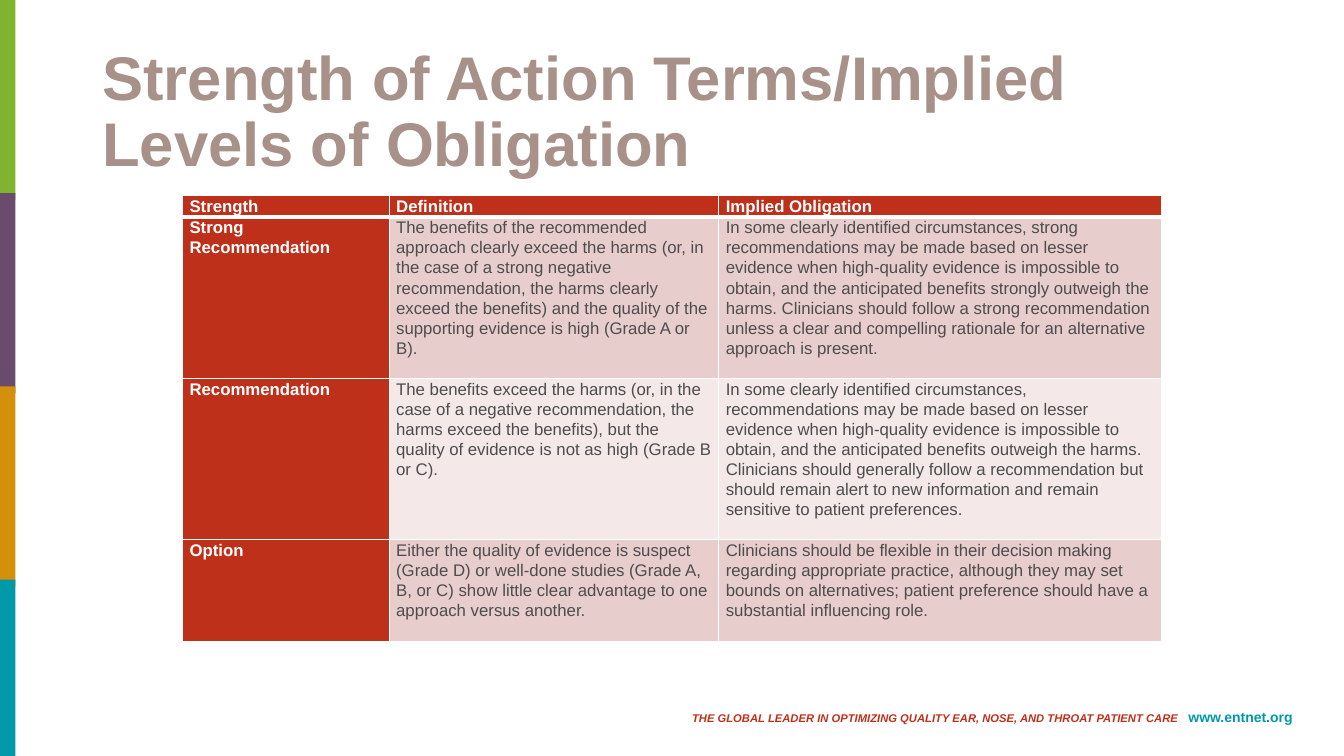
"""Build the slide on strength of action terms and implied obligation."""
from dataclasses import dataclass

import lxml.etree
import pptx
import pptx.dml.color
import pptx.enum.shapes
import pptx.enum.text
import pptx.oxml.ns
import pptx.util

Pt = pptx.util.Pt
RGBColor = pptx.dml.color.RGBColor
PP_ALIGN = pptx.enum.text.PP_ALIGN
MSO_ANCHOR = pptx.enum.text.MSO_ANCHOR


@dataclass(frozen=True)
class Theme:
    """Colours, font and type sizes of the slide."""
    font: str = "Arial"
    white: str = "FFFFFF"
    red: str = "BF301A"
    teal: str = "0099A8"
    title: str = "A89188"
    body: str = "4D4D4D"
    bands: tuple = ("E8CDCD", "F4E8E8")
    bars: tuple = ("80B330", "694C6B", "D3910B", "0099A8")
    title_size: float = 44
    table_size: float = 12
    tagline_size: float = 8
    address_size: float = 10


THEME = Theme()
SLIDE_WIDTH, SLIDE_HEIGHT = 960, 540
BAR_WIDTH, BAR_HEIGHT, BAR_PITCH = 11, 143, 138
COLUMN_WIDTHS = (147.6, 235.5, 316)
ROW_HEIGHTS = (15.1, 115.2, 115.2, 72.8)
TABLE_ROWS = (
    ("Strength", "Definition", "Implied Obligation"),
    (
        "Strong Recommendation",
        "The benefits of the recommended approach clearly exceed the harms (or, in the case of a "
        "strong negative recommendation, the harms clearly exceed the benefits) and the quality "
        "of the supporting evidence is high (Grade A or B).",
        "In some clearly identified circumstances, strong recommendations may be made based on "
        "lesser evidence when high-quality evidence is impossible to obtain, and the anticipated "
        "benefits strongly outweigh the harms. Clinicians should follow a strong recommendation "
        "unless a clear and compelling rationale for an alternative approach is present.",
    ),
    (
        "Recommendation",
        "The benefits exceed the harms (or, in the case of a negative recommendation, the harms "
        "exceed the benefits), but the quality of evidence is not as high (Grade B or C).",
        "In some clearly identified circumstances, recommendations may be made based on lesser "
        "evidence when high-quality evidence is impossible to obtain, and the anticipated "
        "benefits outweigh the harms. Clinicians should generally follow a recommendation but "
        "should remain alert to new information and remain sensitive to patient preferences.",
    ),
    (
        "Option",
        "Either the quality of evidence is suspect (Grade D) or well-done studies (Grade A, B, "
        "or C) show little clear advantage to one approach versus another.",
        "Clinicians should be flexible in their decision making regarding appropriate practice, "
        "although they may set bounds on alternatives; patient preference should have a "
        "substantial influencing role.",
    ),
)


def add_text(paragraph, text, *, size, color, bold=False, italic=False, tracking=0):
    """Append a formatted run; tracking is extra letter spacing in points."""
    run = paragraph.add_run()
    run.text = text
    run.font.name = THEME.font
    run.font.size = Pt(size)
    run.font.bold = bold
    run.font.italic = italic
    run.font.color.rgb = RGBColor.from_string(color)
    if tracking:
        run.font._element.set("spc", str(round(tracking * 100)))


def add_text_box(slide, left, top, width, height, *, align, anchor):
    """Add a wrapping text box and return its first paragraph."""
    frame = slide.shapes.add_textbox(Pt(left), Pt(top), Pt(width), Pt(height)).text_frame
    frame.word_wrap = True
    frame.vertical_anchor = anchor
    paragraph = frame.paragraphs[0]
    paragraph.alignment = align
    return paragraph


def add_side_bars(slide):
    """Stack the coloured bars down the left edge."""
    for index, color in enumerate(THEME.bars):
        top = index * BAR_PITCH
        height = min(BAR_HEIGHT, SLIDE_HEIGHT - top)
        bar = slide.shapes.add_shape(
            pptx.enum.shapes.MSO_SHAPE.RECTANGLE, Pt(0), Pt(top), Pt(BAR_WIDTH), Pt(height))
        bar.shadow.inherit = False
        bar.fill.solid()
        bar.fill.fore_color.rgb = RGBColor.from_string(color)
        bar.line.fill.background()


def add_title(slide):
    """Add the slide title."""
    paragraph = add_text_box(slide, 66, 28.8, 828, 104.4,
                             align=PP_ALIGN.LEFT, anchor=MSO_ANCHOR.MIDDLE)
    paragraph.line_spacing = 0.9
    add_text(paragraph, "Strength of Action Terms/Implied Levels of Obligation",
             size=THEME.title_size, color=THEME.title, bold=True)


def add_footer(slide):
    """Add the tagline and web address."""
    paragraph = add_text_box(slide, 376.6, 502.6, 553.7, 19.4,
                             align=PP_ALIGN.RIGHT, anchor=MSO_ANCHOR.TOP)
    tagline = {"size": THEME.tagline_size, "color": THEME.red, "bold": True, "italic": True}
    add_text(paragraph, "THE GLOBAL LEADER IN OPTIMIZING QUALITY EAR, NOSE, AND THROAT PATIENT CARE",
             **tagline)
    add_text(paragraph, " ", tracking=4.5, **tagline)
    add_text(paragraph, "www.entnet.org", size=THEME.address_size, color=THEME.teal, bold=True)


def set_borders(cell, **widths):
    """Draw white borders on a cell; widths in points are keyed by side L, R, T, B."""
    properties = cell._tc.get_or_add_tcPr()
    qn = pptx.oxml.ns.qn
    for side in "LRTB":
        line = lxml.etree.SubElement(properties, qn(f"a:ln{side}"), w=str(Pt(widths.get(side, 1))))
        fill = lxml.etree.SubElement(line, qn("a:solidFill"))
        lxml.etree.SubElement(fill, qn("a:srgbClr"), val=THEME.white)


def fill_cell(cell, text, *, fill, color, bold):
    """Set the fill, margins and text of a cell."""
    cell.fill.solid()
    cell.fill.fore_color.rgb = RGBColor.from_string(fill)
    cell.margin_left = cell.margin_right = Pt(5)
    cell.margin_top = cell.margin_bottom = Pt(0)
    paragraph = cell.text_frame.paragraphs[0]
    paragraph.line_spacing = 1.07
    add_text(paragraph, text, size=THEME.table_size, color=color, bold=bold)


def add_obligation_table(slide):
    """Add the table of strengths, definitions and obligations."""
    table = slide.shapes.add_table(
        len(ROW_HEIGHTS), len(COLUMN_WIDTHS), Pt(130.4), Pt(139.7),
        Pt(sum(COLUMN_WIDTHS)), Pt(sum(ROW_HEIGHTS))).table
    table.first_col = True
    for column, width in zip(table.columns, COLUMN_WIDTHS):
        column.width = Pt(width)
    for row, height in zip(table.rows, ROW_HEIGHTS):
        row.height = Pt(height)
    for row_index, texts in enumerate(TABLE_ROWS):
        for column_index, text in enumerate(texts):
            cell = table.cell(row_index, column_index)
            set_borders(cell, T=3 if row_index == 1 else 1, B=3 if row_index == 0 else 1)
            heading = row_index == 0 or column_index == 0
            fill_cell(cell, text, bold=heading,
                      fill=THEME.red if heading else THEME.bands[(row_index - 1) % 2],
                      color=THEME.white if heading else THEME.body)


def main():
    """Build and save the presentation."""
    presentation = pptx.Presentation()
    presentation.slide_width = Pt(SLIDE_WIDTH)
    presentation.slide_height = Pt(SLIDE_HEIGHT)
    slide = presentation.slides.add_slide(presentation.slide_layouts[6])
    add_footer(slide)
    add_side_bars(slide)
    add_obligation_table(slide)
    add_title(slide)
    presentation.save("out.pptx")


if __name__ == "__main__":
    main()
